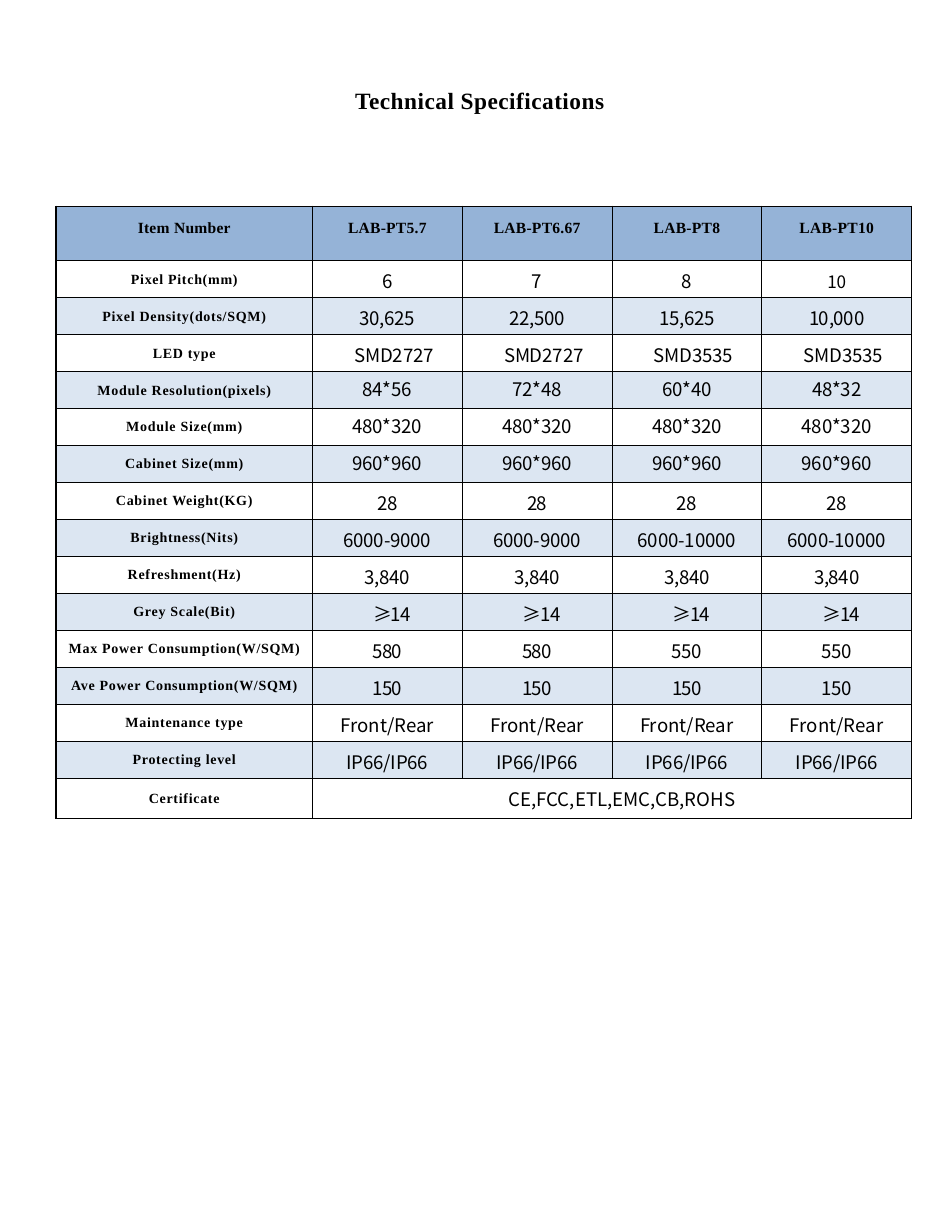
from pptx import Presentation
from pptx.dml.color import RGBColor
from pptx.enum.text import MSO_ANCHOR as Anchor, PP_ALIGN as Align
from pptx.oxml import parse_xml
from pptx.oxml.ns import nsdecls
from pptx.util import Inches, Pt

THEME = {
    "ink": "000000", "header": "95B3D7", "band": "DCE6F2", "plain": "FFFFFF",
    "border": 0.75,
    "title": {"name": "Times New Roman", "size": 15, "bold": True},
    "head": {"name": "Times New Roman", "size": 10, "bold": True},
    "label": {"name": "Times New Roman", "size": 9, "bold": True},
    "value": {"name": "Noto Sans CJK SC", "size": 12, "bold": False},
}

TITLE = "Technical Specifications"
HEADER = ["Item Number", "LAB-PT5.7", "LAB-PT6.67", "LAB-PT8", "LAB-PT10"]

# label, values, letter spacing of the values in points
SPECS = [
    ("Pixel Pitch(mm)", ["6", "7", "8", "10"], -0.1),
    ("Pixel Density(dots/SQM)", ["30,625", "22,500", "15,625", "10,000"], -0.2),
    ("LED type", ["SMD2727"] * 2 + ["SMD3535"] * 2, -0.1),
    ("Module Resolution(pixels)", ["84*56", "72*48", "60*40", "48*32"], -0.1),
    ("Module Size(mm)", ["480*320"] * 4, -0.1),
    ("Cabinet Size(mm)", ["960*960"] * 4, -0.1),
    ("Cabinet Weight(KG)", ["28"] * 4, -0.3),
    ("Brightness(Nits)", ["6000-9000"] * 2 + ["6000-10000"] * 2, -0.1),
    ("Refreshment(Hz)", ["3,840"] * 4, -0.2),
    ("Grey Scale(Bit)", ["≥14"] * 4, -0.6),
    ("Max Power Consumption(W/SQM)", ["580"] * 2 + ["550"] * 2, -0.3),
    ("Ave Power Consumption(W/SQM)", ["150"] * 4, -0.5),
    ("Maintenance type", ["Front/Rear"] * 4, 0),
    ("Protecting level", ["IP66/IP66"] * 4, -0.1),
    ("Certificate", ["CE,FCC,ETL,EMC,CB,ROHS"], 0),
]

# cell margins in inches that nudge the centred text
HEAD_MARGINS = {"bottom": 0.09}
VALUE_MARGINS = {"top": 0.02}
SIZE_MARGINS = {"bottom": 0.04}
ROW_MARGINS = {
    "LED type": {"top": 0.02, "left": 0.12},
    "Module Resolution(pixels)": SIZE_MARGINS,
    "Module Size(mm)": SIZE_MARGINS,
    "Cabinet Size(mm)": SIZE_MARGINS,
    "Grey Scale(Bit)": {"top": 0.02, "left": 0.08},
    "Certificate": {"left": 0.18},
}

LEFT, TOP, WIDTH = 0.5, 1.84, 7.64
LABEL_WIDTH = 2.29
HEADER_HEIGHT, ROW_HEIGHT, LAST_HEIGHT = 0.49, 0.33, 0.36


def write(frame, text, style, spacing, **changes):
    """Put one centred line into a text frame, spacing in points."""
    para = frame.paragraphs[0]
    para.alignment = Align.CENTER
    span = para.add_run()
    span.text = text
    look = {**style, **changes}
    look["size"] = Pt(look["size"])
    for key, value in look.items():
        setattr(span.font, key, value)
    span.font.color.rgb = RGBColor.from_string(THEME["ink"])
    props = span.font._element
    props.set("spc", str(round(spacing * 100)))
    props.append(parse_xml(f'<a:ea {nsdecls("a")} typeface="{look["name"]}"/>'))


def set_margins(target, margins):
    for side in ("left", "right", "top", "bottom"):
        setattr(target, f"margin_{side}", Inches(margins.get(side, 0)))


def format_cell(cell, fill, margins):
    set_margins(cell, margins)
    cell.vertical_anchor = Anchor.MIDDLE
    props = cell._tc.get_or_add_tcPr()
    for side in "LRTB":
        props.append(parse_xml(
            f'<a:ln{side} {nsdecls("a")} w="{Pt(THEME["border"])}"><a:solidFill>'
            f'<a:srgbClr val="{THEME["ink"]}"/></a:solidFill></a:ln{side}>'))
    cell.fill.solid()
    cell.fill.fore_color.rgb = RGBColor.from_string(fill)


def add_title(page):
    box = page.shapes.add_textbox(Inches(3.14), Inches(0.77), Inches(2.29), Inches(0.23))
    set_margins(box.text_frame, {})
    box.text_frame.word_wrap = False
    write(box.text_frame, TITLE, THEME["title"], 0.3)


def add_spec_table(page):
    heights = [HEADER_HEIGHT] + [ROW_HEIGHT] * (len(SPECS) - 1) + [LAST_HEIGHT]
    models = len(HEADER) - 1
    widths = [LABEL_WIDTH] + [(WIDTH - LABEL_WIDTH) / models] * models
    table = page.shapes.add_table(
        len(heights), len(widths), Inches(LEFT), Inches(TOP),
        Inches(WIDTH), Inches(sum(heights))).table
    table.first_row = table.horz_banding = False
    for column, width in zip(table.columns, widths):
        column.width = Inches(width)
    for row, height in zip(table.rows, heights):
        row.height = Inches(height)

    for col, text in enumerate(HEADER):
        cell = table.cell(0, col)
        format_cell(cell, THEME["header"], HEAD_MARGINS)
        write(cell.text_frame, text, THEME["head"], 0.2)

    for row, (label, values, spacing) in enumerate(SPECS, start=1):
        fill = THEME["plain"] if row % 2 else THEME["band"]
        margins = ROW_MARGINS.get(label, VALUE_MARGINS)
        for col in range(len(widths)):
            format_cell(table.cell(row, col), fill, margins if col else {})
        write(table.cell(row, 0).text_frame, label, THEME["label"], 0.45)
        if len(values) == 1:
            table.cell(row, 1).merge(table.cell(row, models))
        for col, text in enumerate(values, start=1):
            changes = {"size": 11} if text == "10" else {}
            write(table.cell(row, col).text_frame, text, THEME["value"], spacing, **changes)


def main():
    deck = Presentation()
    deck.slide_width, deck.slide_height = Inches(8.5), Inches(11)
    page = deck.slides.add_slide(deck.slide_layouts[6])
    add_spec_table(page)
    add_title(page)
    deck.save("out.pptx")


if __name__ == "__main__":
    main()
